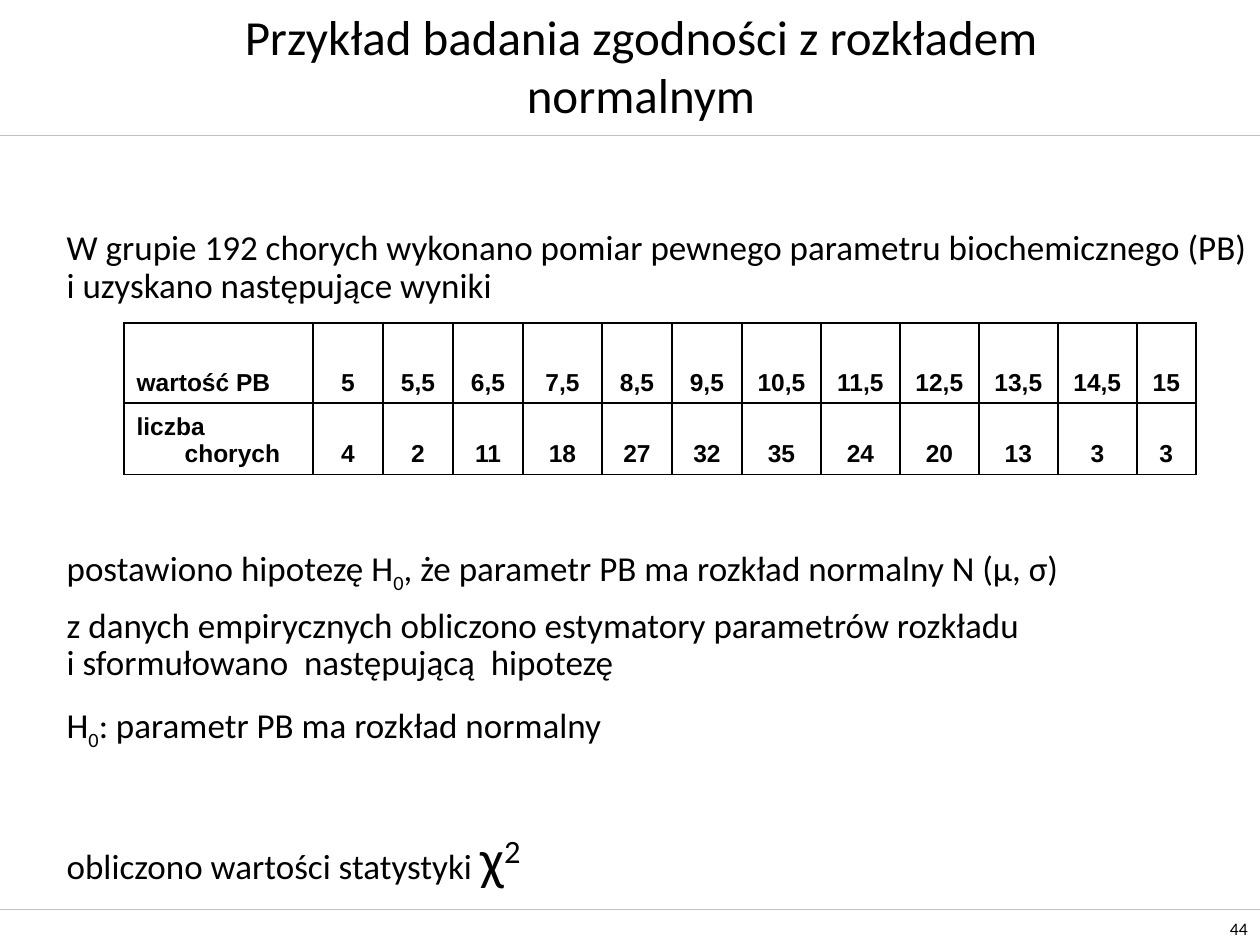
from lxml import etree
from pptx import Presentation
from pptx.dml.color import RGBColor
from pptx.enum.shapes import MSO_CONNECTOR
from pptx.enum.text import MSO_ANCHOR, MSO_AUTO_SIZE, PP_ALIGN
from pptx.oxml.ns import qn
from pptx.util import Emu, Pt

LINE = MSO_CONNECTOR.STRAIGHT
MIDDLE, BOTTOM = MSO_ANCHOR.MIDDLE, MSO_ANCHOR.BOTTOM
LEFT, CENTER, RIGHT = PP_ALIGN.LEFT, PP_ALIGN.CENTER, PP_ALIGN.RIGHT
FIXED = MSO_AUTO_SIZE.NONE
SUB, SUPER = -25000, 30000
W, H = 1260, 945

# Space before in points, then runs of (text, baseline, size)
PARAGRAPHS = [
    (0, [("W grupie 192 chorych wykonano pomiar pewnego parametru biochemicznego "
          "(PB) i uzyskano następujące wyniki", 0, None)]),
    (138, [("postawiono hipotezę H", 0, None), ("0", SUB, None),
           (", że parametr PB ma rozkład normalny N (μ, σ)", 0, None)]),
    (10, [("z danych empirycznych obliczono estymatory parametrów rozkładu \v"
           "i sformułowano  następującą  hipotezę", 0, None)]),
    (12, [("H", 0, None), ("0", SUB, None),
          (": parametr PB ma rozkład normalny", 0, None)]),
    (48, [("obliczono wartości statystyki ", 0, None), ("χ", 0, 32),
          ("2", SUPER, 32)]),
]
ROWS = [
    ["wartość PB", "5", "5,5", "6,5", "7,5", "8,5", "9,5", "10,5", "11,5",
     "12,5", "13,5", "14,5", "15"],
    ["liczba chorych", "4", "2", "11", "18", "27", "32", "35", "24", "20",
     "13", "3", "3"],
]
COL_WIDTHS = [189, 70, 70, 70, 79, 70, 70, 79, 79, 79, 79, 79, 59]
ROW_HEIGHTS = [80, 71]


def px(n):
    return Emu(round(n * 914400 / 126))


def color(hex_string):
    return RGBColor.from_string(hex_string)


def place(sp, box):
    sp.left, sp.top, sp.width, sp.height = map(px, box)


def style(p, size, align, font="Calibri", bold=False):
    p.alignment = align
    p.font.size, p.font.name, p.font.bold = Pt(size), font, bold
    p.font.color.rgb = color("000000")


def set_indent(p, margin, first):
    pPr = p._p.get_or_add_pPr()
    pPr.set("marL", str(px(margin)))
    pPr.set("indent", str(px(first)))
    return pPr


def add_rule(s, y):
    """Draw a thin grey line across the slide."""
    line = s.shapes.add_connector(LINE, 0, px(y), px(W), px(y))
    line.line.color.rgb = color("C0C0C0")
    line.line.width = Pt(0.25)
    etree.SubElement(line._element.spPr, qn("a:effectLst"))


def add_page_number(s, box, number):
    sp = s.shapes.add_textbox(*map(px, box))
    tf = sp.text_frame
    tf.word_wrap = True
    tf.vertical_anchor = BOTTOM
    tf.text = number
    style(tf.paragraphs[0], 10, RIGHT)


def fill_title(sp, box, text):
    place(sp, box)
    tf = sp.text_frame
    tf.auto_size = FIXED
    tf.vertical_anchor = MIDDLE
    tf.text = text
    style(tf.paragraphs[0], 28, CENTER)


def fill_body(sp, box):
    place(sp, box)
    tf = sp.text_frame
    tf.auto_size = FIXED
    for i, (space, runs) in enumerate(PARAGRAPHS):
        p = tf.add_paragraph() if i else tf.paragraphs[0]
        p.line_spacing, p.space_before = 0.9, Pt(space)
        etree.SubElement(set_indent(p, 0, 0), qn("a:buNone"))
        style(p, 20, LEFT)
        p.text = runs[0][0]
        for text, baseline, size in runs[1:]:
            r = p.add_run()
            r.text = text
            if size:
                r.font.size = Pt(size)
            if baseline:
                r.font._element.set("baseline", str(baseline))


def add_borders(cell):
    tcPr = cell._tc.get_or_add_tcPr()
    for i, side in enumerate(("lnL", "lnR", "lnT", "lnB")):
        ln = etree.Element(qn(f"a:{side}"), w=str(Pt(1)))
        fill = etree.SubElement(ln, qn("a:solidFill"))
        etree.SubElement(fill, qn("a:srgbClr"), val="000000")
        tcPr.insert(i, ln)


def add_results_table(s, left, top):
    table = s.shapes.add_table(
        len(ROWS), len(COL_WIDTHS), px(left), px(top),
        px(sum(COL_WIDTHS)), px(sum(ROW_HEIGHTS))).table
    table.first_row = table.horz_banding = False
    for column, width in zip(table.columns, COL_WIDTHS):
        column.width = px(width)
    for i, (row, height) in enumerate(zip(ROWS, ROW_HEIGHTS)):
        table.rows[i].height = px(height)
        for j, text in enumerate(row):
            cell = table.cell(i, j)
            cell.text = text
            cell.vertical_anchor = BOTTOM
            cell.fill.background()
            add_borders(cell)
            p = cell.text_frame.paragraphs[0]
            if j == 0:
                set_indent(p, 48, -48)
            style(p, 14, CENTER if j else LEFT, "Arial", True)


def main():
    prs = Presentation()
    prs.slide_width, prs.slide_height = px(W), px(H)
    s = prs.slides.add_slide(prs.slide_layouts[1])
    add_rule(s, 135)
    add_rule(s, 909)
    add_page_number(s, (1196, 910, 64, 35), "44")
    fill_title(s.shapes.title, (144, 0, 994, 130),
               "Przykład badania zgodności z rozkładem normalnym")
    fill_body(s.placeholders[1], (54, 224, 1206, 566))
    add_results_table(s, 124, 323)
    prs.save("out.pptx")


if __name__ == "__main__":
    main()
